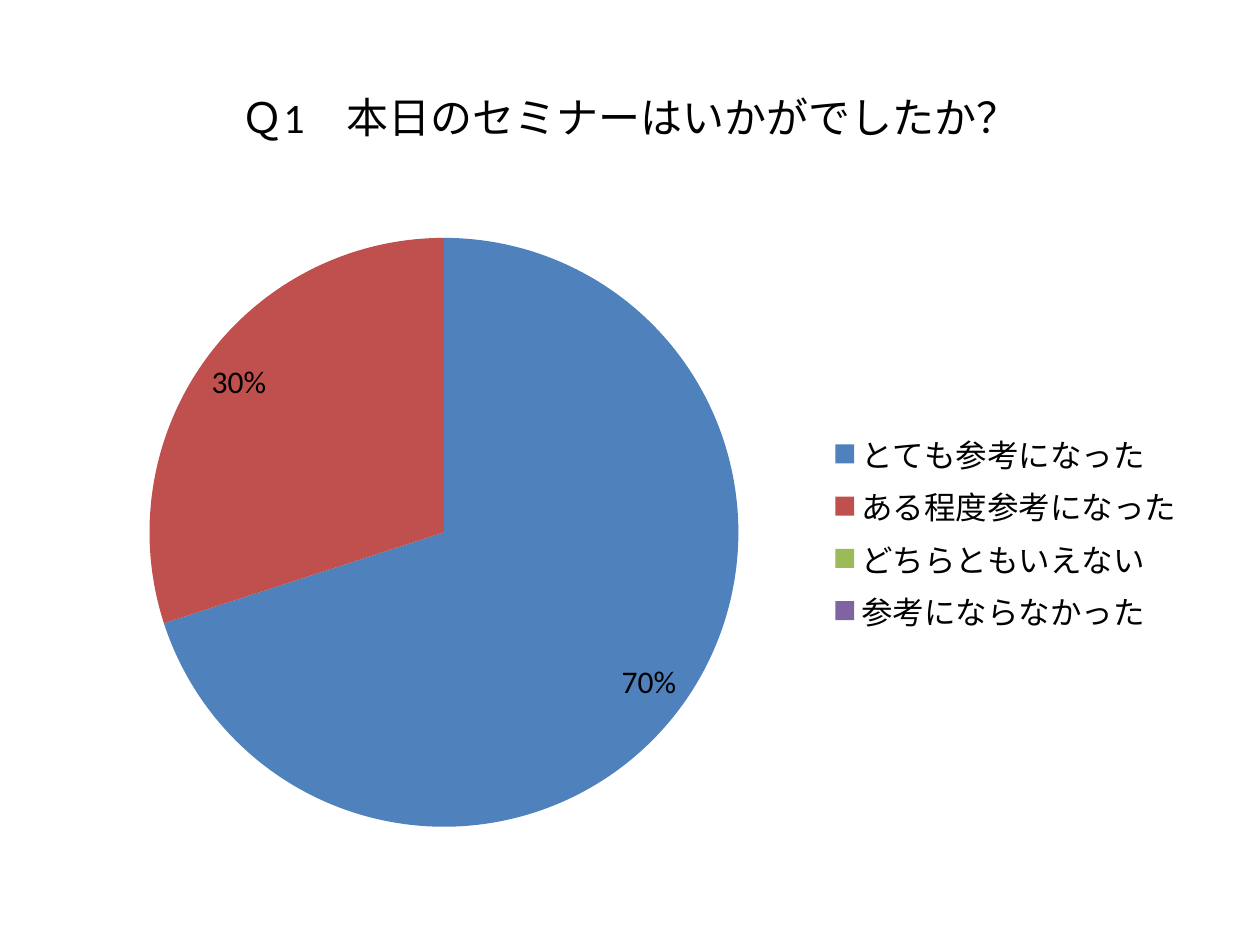
from pptx import Presentation
from pptx.chart.data import CategoryChartData
from pptx.dml.color import RGBColor
from pptx.enum.chart import XL_CHART_TYPE, XL_LABEL_POSITION, XL_LEGEND_POSITION
from pptx.enum.text import MSO_ANCHOR, PP_ALIGN
from pptx.util import Pt

PIE = XL_CHART_TYPE.PIE
INSIDE_END = XL_LABEL_POSITION.INSIDE_END
RIGHT = XL_LEGEND_POSITION.RIGHT
MIDDLE = MSO_ANCHOR.MIDDLE
CENTER = PP_ALIGN.CENTER

FONT = "Calibri"
BLACK = "000000"
ANSWERS = [
    ("とても参考になった", 70, "4F81BD"),
    ("ある程度参考になった", 30, "C0504D"),
    ("どちらともいえない", 0, "9BBB59"),
    ("参考にならなかった", 0, "8064A2"),
]


def rgb(hex_color):
    """Return the colour for a hex string."""
    return RGBColor.from_string(hex_color)


def style_font(font, size):
    """Apply the slide's typeface and text colour at the given size."""
    font.name = FONT
    font.size = Pt(size)
    font.bold = False
    font.color.rgb = rgb(BLACK)


def add_question(slide, left, top, width, height):
    """Place the survey question centred in its box."""
    question = slide.shapes.add_textbox(Pt(left), Pt(top), Pt(width), Pt(height))
    frame = question.text_frame
    frame.word_wrap = True
    frame.vertical_anchor = MIDDLE
    paragraph = frame.paragraphs[0]
    paragraph.text = "Ｑ1　本日のセミナーはいかがでしたか？"
    paragraph.alignment = CENTER
    style_font(paragraph.font, 24)


def add_answers(slide, left, top, width, height):
    """Place the pie of answers with its legend in the box."""
    data = CategoryChartData()
    data.categories = [answer for answer, _, _ in ANSWERS]
    data.add_series("Series 1", [share for _, share, _ in ANSWERS])
    chart = slide.shapes.add_chart(
        PIE, Pt(left), Pt(top), Pt(width), Pt(height), data
    ).chart
    style_font(chart.font, 18)
    chart.has_title = False
    chart.has_legend = True
    chart.legend.position = RIGHT
    chart.legend.include_in_layout = False

    plot = chart.plots[0]
    plot.vary_by_categories = True
    for index, (_, _, color) in enumerate(ANSWERS):
        fill = plot.series[0].points[index].format.fill
        fill.solid()
        fill.fore_color.rgb = rgb(color)

    labels = plot.series[0].data_labels
    labels.show_percentage = True
    labels.show_value = False
    labels.number_format = "0%;;"
    labels.number_format_is_linked = False
    labels.position = INSIDE_END
    style_font(labels.font, 18)


def main():
    """Build the survey slide and save it."""
    deck = Presentation()
    deck.slide_width, deck.slide_height = Pt(720), Pt(540)
    slide = deck.slides.add_slide(deck.slide_layouts[6])
    add_question(slide, 36, 21.6, 648, 90)
    add_answers(slide, 36, 126, 648, 356.4)
    deck.save("out.pptx")


if __name__ == "__main__":
    main()
